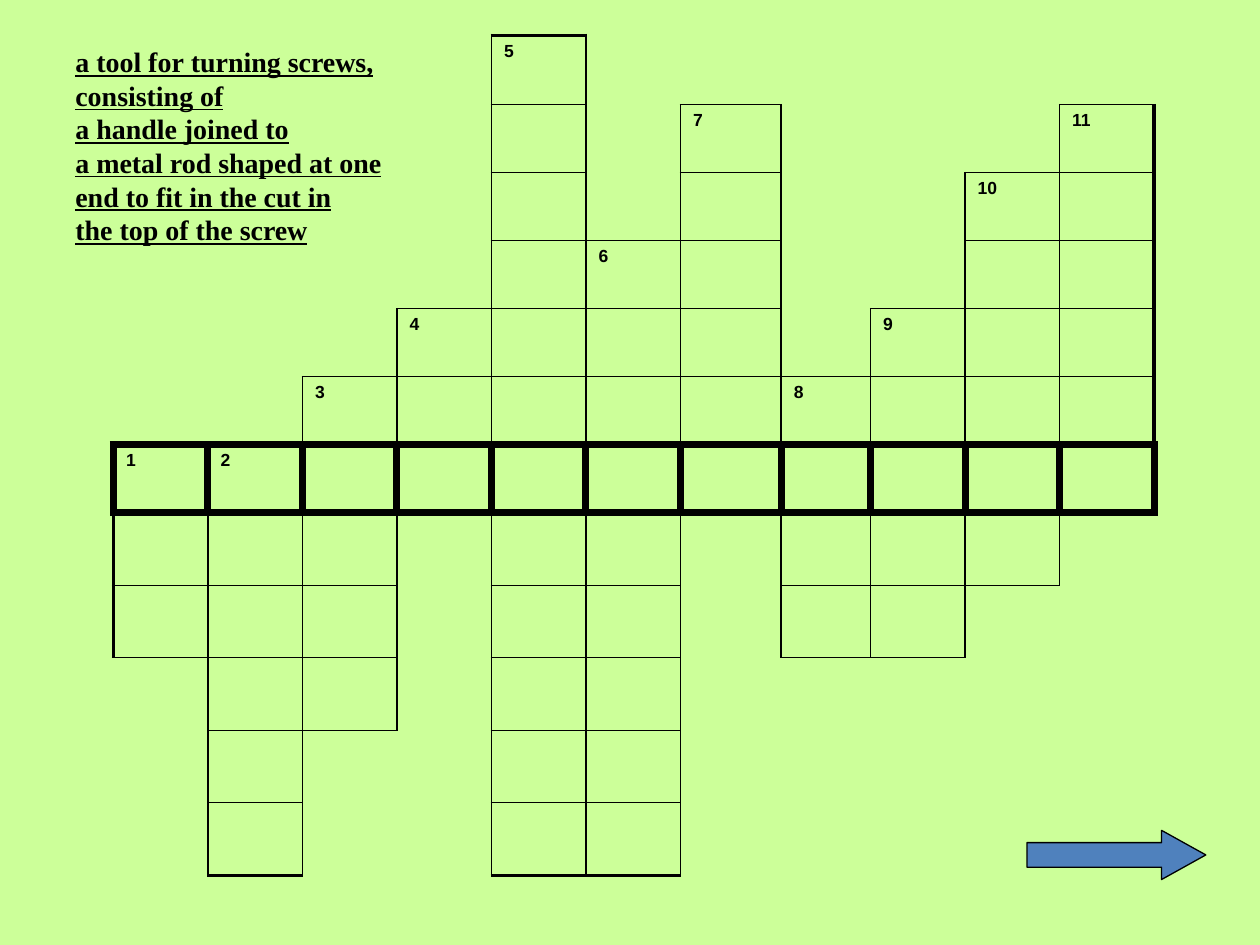
from pptx import Presentation
from pptx.dml.color import RGBColor
from pptx.enum.shapes import MSO_SHAPE
from pptx.enum.text import MSO_ANCHOR
from pptx.oxml.ns import qn
from pptx.util import Inches, Pt
from lxml.etree import SubElement

# Content: underscores hold together words that share a line
CLUE = ("a_tool_for_turning_screws, consisting of a_handle_joined_to "
        "a_metal_rod_shaped_at one end to_fit_in the_cut_in the_top_of the_screw")
# First and last grid row of each crossword answer, numbered from the left
ANSWERS = [(6, 8), (6, 11), (5, 9), (4, 6), (0, 11), (3, 11),
           (1, 6), (5, 8), (4, 8), (2, 7), (1, 6)]
KEYWORD_ROW = 6
COLUMN_WIDTHS = [0.75] * 6 + [0.8, 0.71] + [0.75] * 3
ROW_HEIGHTS = [0.55] + [0.54] * 6 + [0.58, 0.57, 0.58, 0.57, 0.58]
THIN, EDGE, THICK = 1, 2.25, 4.5
INK, PAPER, ARROW_BLUE = "000000", "CCFF99", "4F81BD"


def color(hex_code):
    return RGBColor.from_string(hex_code)


def style_font(paragraph, name, size):
    font = paragraph.font
    font.name, font.size, font.bold = name, Pt(size), True
    font.color.rgb = color(INK)


def in_answer(row, column):
    if not 0 <= column < len(ANSWERS):
        return False
    first, last = ANSWERS[column]
    return first <= row <= last


def border_weight(here, beside):
    """Weight of the line shared by two neighbouring grid squares."""
    squares = [square for square in (here, beside) if in_answer(*square)]
    if not squares:
        return 0
    if any(row == KEYWORD_ROW for row, _ in squares):
        return THICK
    row, column = beside
    outside = not (0 <= row < len(ROW_HEIGHTS) and 0 <= column < len(COLUMN_WIDTHS))
    return EDGE if outside else THIN


def draw_borders(cell, row, column):
    properties = cell._tc.get_or_add_tcPr()
    neighbours = {"a:lnL": (row, column - 1), "a:lnR": (row, column + 1),
                  "a:lnT": (row - 1, column), "a:lnB": (row + 1, column)}
    for tag, beside in neighbours.items():
        weight = border_weight((row, column), beside)
        line = SubElement(properties, qn(tag), w=str(Pt(weight)))
        if weight:
            fill = SubElement(line, qn("a:solidFill"))
            SubElement(fill, qn("a:srgbClr"), val=INK)
        else:
            SubElement(line, qn("a:noFill"))


presentation = Presentation()
presentation.slide_width, presentation.slide_height = Inches(10), Inches(7.5)
slide = presentation.slides.add_slide(presentation.slide_layouts[6])
slide.background.fill.solid()
slide.background.fill.fore_color.rgb = color(PAPER)

# Clue
clue = slide.shapes.add_textbox(Inches(0.5), Inches(0.13), Inches(2.85), Inches(2.05)).text_frame
clue.word_wrap = True
clue.vertical_anchor = MSO_ANCHOR.MIDDLE
clue.text = CLUE.replace("_", chr(160))
style_font(clue.paragraphs[0], "Times New Roman", 16)
clue.paragraphs[0].font.underline = True

# Crossword grid
crossword = slide.shapes.add_table(
    len(ROW_HEIGHTS), len(COLUMN_WIDTHS), Inches(0.9), Inches(0.28),
    Inches(sum(COLUMN_WIDTHS)), Inches(sum(ROW_HEIGHTS))).table
crossword.first_row = crossword.horz_banding = False
for column, width in enumerate(COLUMN_WIDTHS):
    crossword.columns[column].width = Inches(width)
for row, height in enumerate(ROW_HEIGHTS):
    crossword.rows[row].height = Inches(height)
    for column, (first_row, _) in enumerate(ANSWERS):
        square = crossword.cell(row, column)
        draw_borders(square, row, column)
        square.fill.background()
        if row == first_row:
            square.text = str(column + 1)
            number = square.text_frame.paragraphs[0]
            number.space_before = Pt(2)
            style_font(number, "Arial", 10)

# Arrow to the next slide
arrow = slide.shapes.add_shape(MSO_SHAPE.RIGHT_ARROW, Inches(8.15), Inches(6.59),
                               Inches(1.42), Inches(0.39))
arrow.adjustments[0], arrow.adjustments[1] = 0.5, 0.9
arrow.shadow.inherit = False
arrow.fill.solid()
arrow.fill.fore_color.rgb = color(ARROW_BLUE)
arrow.line.color.rgb = color(INK)
arrow.line.width = Pt(0.75)

presentation.save("out.pptx")
